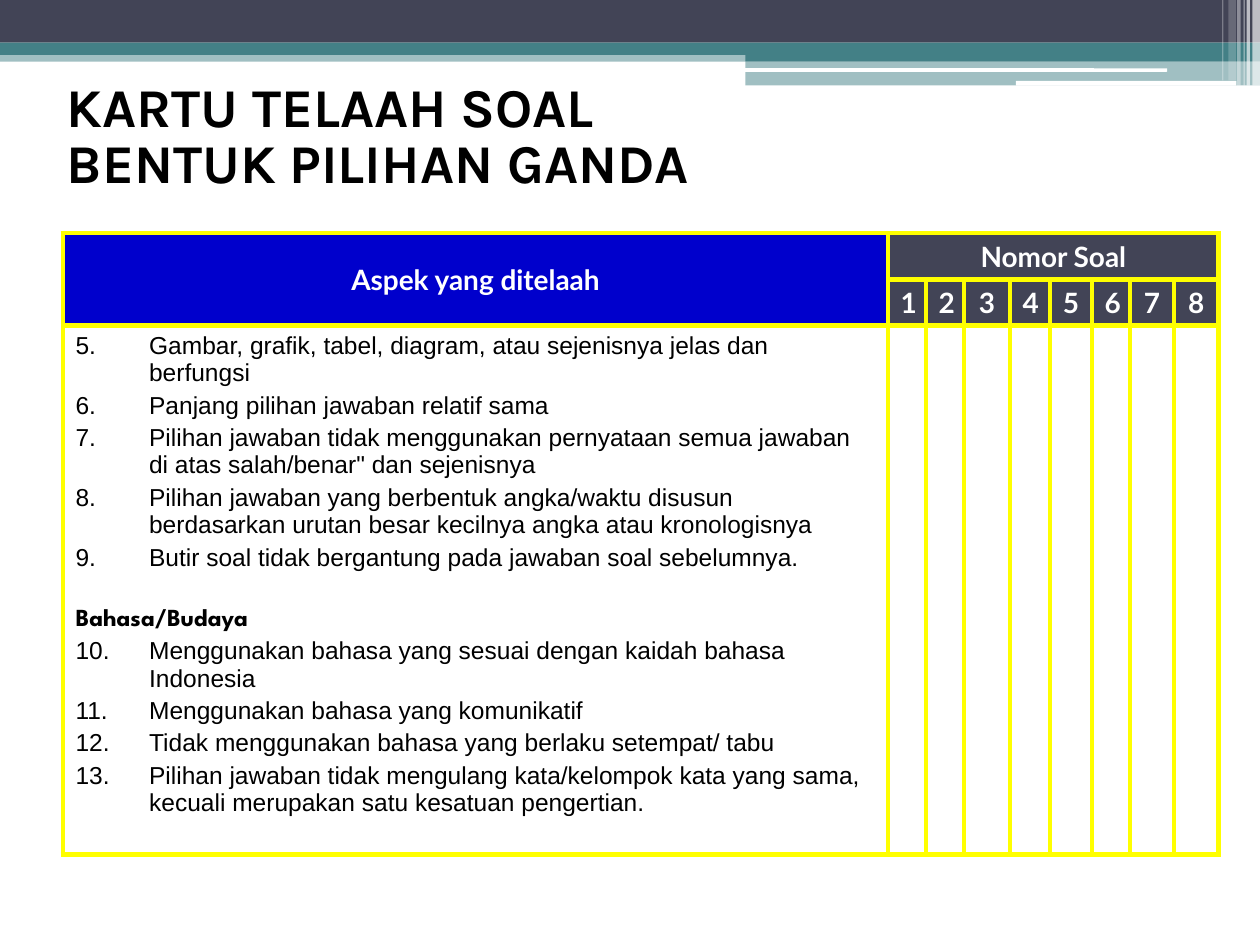
from lxml.etree import SubElement as Sub
from pptx import Presentation
from pptx.dml.color import RGBColor
from pptx.enum.shapes import MSO_SHAPE as Kind
from pptx.enum.text import MSO_ANCHOR as Anchor, MSO_AUTO_SIZE as Auto, PP_ALIGN as Align
from pptx.oxml.ns import qn
from pptx.util import Pt

WHITE, BLACK, DARK, TEAL = "FFFFFF", "000000", "424456", "438086"
BLUE, YELLOW = "0000CC", "FFFF00"

# left, top, width, height, colour, opacity in percent
BANDS = [
    (0, 28.8, 720, 6.5, TEAL, 50),
    (0, 0, 720, 24.4, DARK, 100),
    (0, 24.4, 720, 7, TEAL, 100),
    (426, 28, 294, 7, TEAL, 100),
    (426, 34.8, 294, 14, TEAL, 50),
]
BARS = [(425.5, 39, 241.5, 2), (580.5, 46.2, 126, 2.7)]
# left, width, height, opacity in percent
STRIPES = [
    (715.7, 4.3, 49, 65), (712.3, 2, 49, 65), (710.6, 0.7, 49, 60),
    (707, 2, 49, 40), (702, 4.3, 46, 20), (698.4, 0.7, 46, 30),
]
WIDTHS = [471.5, 21.7, 21.7, 26.3, 22.9, 24, 21.7, 25.1, 25.7]
HEIGHTS = [26.4, 26.4, 302.4]
FORM = [
    "Gambar, grafik, tabel, diagram, atau sejenisnya jelas dan berfungsi",
    "Panjang pilihan jawaban relatif sama",
    "Pilihan jawaban tidak menggunakan pernyataan semua jawaban di atas salah/benar\" dan sejenisnya",
    "Pilihan jawaban yang berbentuk angka/waktu disusun berdasarkan urutan besar kecilnya angka atau kronologisnya",
    "Butir soal tidak bergantung pada jawaban soal sebelumnya.",
]
SPEECH = [
    "Menggunakan bahasa yang sesuai dengan kaidah bahasa Indonesia",
    "Menggunakan bahasa yang komunikatif",
    "Tidak menggunakan bahasa yang berlaku setempat/ tabu",
    "Pilihan jawaban tidak mengulang kata/kelompok kata yang sama, kecuali merupakan satu kesatuan pengertian.",
]


def tint(code):
    return RGBColor.from_string(code)


def write(para, text, font="Arial", size=14, color=BLACK, bold=False,
          align=Align.LEFT, before=0, line=None, start=None):
    """Fill a paragraph; start numbers it as part of a list."""
    para.text = text
    para.alignment = align
    para.space_before = Pt(before)
    if line:
        para.line_spacing = line
    if start:
        props = para._p.get_or_add_pPr()
        props.set("marL", str(Pt(42)))
        props.set("indent", str(-Pt(42)))
        Sub(props, qn("a:buFont"), typeface="+mj-lt")
        Sub(props, qn("a:buAutoNum"), type="arabicPeriod", startAt=str(start))
    for run in para.runs:
        run.font.name = font
        run.font.size = Pt(size)
        run.font.bold = bold
        run.font.color.rgb = tint(color)


def edge(cell, color, width):
    """Draw all four borders of a cell."""
    props = cell._tc.get_or_add_tcPr()
    for side in ("lnL", "lnR", "lnT", "lnB"):
        rule = Sub(props, qn("a:" + side), w=str(Pt(width)))
        Sub(Sub(rule, qn("a:solidFill")), qn("a:srgbClr"), val=color)


class Deck:
    font = "Lato"

    def __init__(self):
        self.prs = Presentation()
        self.prs.slide_width, self.prs.slide_height = Pt(720), Pt(540)
        self.slide = self.prs.slides.add_slide(self.prs.slide_layouts[5])

    def block(self, left, top, width, height, color, alpha=100, kind=Kind.RECTANGLE):
        shape = self.slide.shapes.add_shape(kind, Pt(left), Pt(top), Pt(width), Pt(height))
        shape.shadow.inherit = False
        shape.line.fill.background()
        shape.fill.solid()
        shape.fill.fore_color.rgb = tint(color)
        if alpha < 100:
            code = shape._element.xpath("./p:spPr/a:solidFill/a:srgbClr")[0]
            Sub(code, qn("a:alpha"), val=str(alpha * 1000))

    def title(self, text, left, top, width, height):
        box = self.slide.shapes.title
        box.left, box.top, box.width, box.height = Pt(left), Pt(top), Pt(width), Pt(height)
        frame = box.text_frame
        frame.auto_size = Auto.NONE
        frame.word_wrap = True
        frame.vertical_anchor = Anchor.MIDDLE
        write(frame.paragraphs[0], text, font="Karla", size=31.2, bold=True, line=0.85)

    def grid(self, left, top, widths, heights):
        table = self.slide.shapes.add_table(
            len(heights), len(widths), Pt(left), Pt(top),
            Pt(sum(widths)), Pt(sum(heights))).table
        table.first_row = table.horz_banding = False
        for col, width in zip(table.columns, widths):
            col.width = Pt(width)
        for row, height in zip(table.rows, heights):
            row.height = Pt(height)
        for cell in table.iter_cells():
            edge(cell, YELLOW, 3)
            cell.fill.background()
        return table

    def head(self, cell, text, color=DARK):
        cell.fill.solid()
        cell.fill.fore_color.rgb = tint(color)
        cell.vertical_anchor = Anchor.MIDDLE
        write(cell.text_frame.paragraphs[0], text, font=self.font, size=16,
              color=WHITE, bold=True, align=Align.CENTER)

    def points(self, frame, items, start):
        """Add a numbered list to a text frame."""
        for text in items:
            fresh = not frame.text
            para = frame.paragraphs[0] if fresh else frame.add_paragraph()
            write(para, text, before=0 if fresh else 2.8, start=start)


def main():
    deck = Deck()
    for band in BANDS:
        deck.block(*band)
    for bar in BARS:
        deck.block(*bar, WHITE, kind=Kind.ROUNDED_RECTANGLE)
    for left, width, height, alpha in STRIPES:
        deck.block(left, 0, width, height, WHITE, alpha)
    deck.title("KARTU TELAAH SOAL\vBENTUK PILIHAN GANDA", 31, 39.6, 582, 79.2)

    table = deck.grid(36, 133.2, WIDTHS, HEIGHTS)
    table.cell(0, 0).merge(table.cell(1, 0))
    table.cell(0, 1).merge(table.cell(0, 8))
    deck.head(table.cell(0, 0), "Aspek yang ditelaah", BLUE)
    deck.head(table.cell(0, 1), "Nomor Soal")
    for num in range(1, 9):
        deck.head(table.cell(1, num), str(num))

    frame = table.cell(2, 0).text_frame
    deck.points(frame, FORM, 5)
    write(frame.add_paragraph(), "Bahasa/Budaya", font="League Spartan", bold=True, before=21.7)
    deck.points(frame, SPEECH, 10)
    deck.prs.save("out.pptx")


if __name__ == "__main__":
    main()
